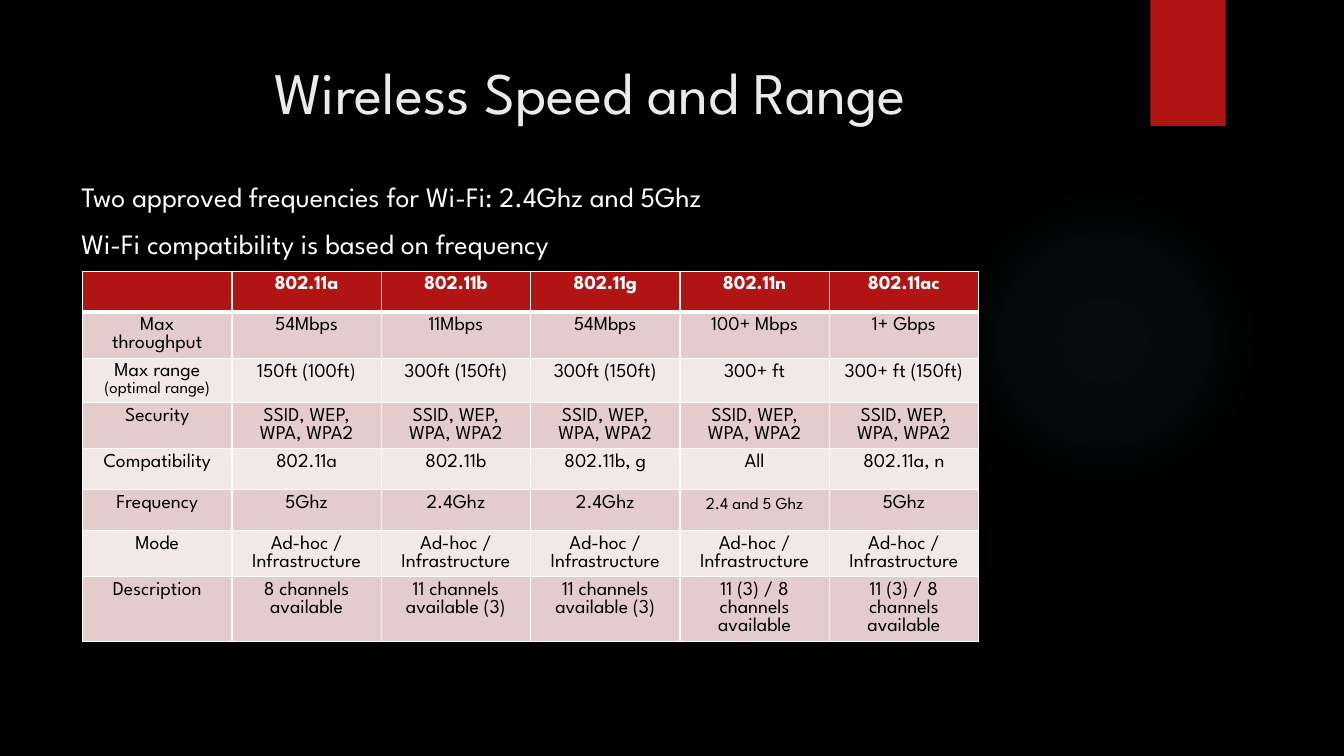
from lxml.etree import SubElement
from pptx import Presentation
from pptx.dml.color import RGBColor
from pptx.enum.shapes import MSO_SHAPE
from pptx.enum.text import MSO_ANCHOR, PP_ALIGN
from pptx.oxml import parse_xml
from pptx.oxml.ns import nsdecls, qn
from pptx.util import Pt

HUES = {"back": "000000", "red": "B01513", "glow": "50B9C1", "title": "EBEBEB",
        "white": "FFFFFF", "ink": "000000", "dark": "E4CCCC", "light": "F2E8E7"}
FACE = "League Spartan"


def rgb(name):
    return RGBColor.from_string(HUES[name])


def write(para, text, size, hue, bold=False):
    run = para.add_run()
    run.text = text
    look = {"name": FACE, "size": Pt(size), "bold": bold}
    for key, value in look.items():
        setattr(run.font, key, value)
    run.font.color.rgb = rgb(hue)


deck = Presentation()
deck.slide_width, deck.slide_height = Pt(960), Pt(540)
slide = deck.slides.add_slide(deck.slide_layouts[6])
slide.background.fill.solid()
slide.background.fill.fore_color.rgb = rgb("back")

# Soft round glow
glow = slide.shapes.add_shape(MSO_SHAPE.OVAL, Pt(677.5), Pt(131.8), Pt(221.8), Pt(221.8))
glow.shadow.inherit = False
glow.line.fill.background()
stops = "".join(
    f'<a:gs pos="{pos * 1000}"><a:srgbClr val="{HUES["glow"]}">'
    f'<a:alpha val="{alpha * 1000}"/></a:srgbClr></a:gs>'
    for pos, alpha in ((0, 7), (36, 6), (69, 0)))
grad = parse_xml(
    f'<a:gradFill {nsdecls("a")}><a:gsLst>{stops}</a:gsLst><a:path path="circle">'
    '<a:fillToRect l="50000" t="50000" r="50000" b="50000"/></a:path></a:gradFill>')
glow.element.spPr.find(qn("a:prstGeom")).addnext(grad)

# Red tab
tab = slide.shapes.add_shape(MSO_SHAPE.RECTANGLE, Pt(821.8), 0, Pt(53.8), Pt(90))
tab.shadow.inherit = False
tab.line.fill.background()
tab.fill.solid()
tab.fill.fore_color.rgb = rgb("red")

# Title
title = slide.shapes.add_textbox(Pt(51), Pt(36), Pt(741), Pt(64)).text_frame
for key, value in {"word_wrap": True, "vertical_anchor": MSO_ANCHOR.TOP}.items():
    setattr(title, key, value)
title.paragraphs[0].alignment = PP_ALIGN.CENTER
write(title.paragraphs[0], "Wireless Speed and Range", 42, "title")

# Body lines
body = slide.shapes.add_textbox(Pt(51), Pt(124.5), Pt(741), Pt(367)).text_frame
body.word_wrap = True
lines = ["Two approved frequencies for Wi-Fi: 2.4Ghz and 5Ghz",
         "Wi-Fi compatibility is based on frequency"]
for i, line in enumerate(lines):
    para = body.add_paragraph() if i else body.paragraphs[0]
    if i:
        para.space_before = Pt(10)
    write(para, line, 20, "white")

# Table
SAFE = "SSID, WEP, WPA, WPA2"
MODE = "Ad-hoc / Infrastructure"
BOTH = "11 (3) / 8 channels available"
FEW = "11 channels available (3)"
rows = [
    ["", "802.11a", "802.11b", "802.11g", "802.11n", "802.11ac"],
    ["Max throughput", "54Mbps", "11Mbps", "54Mbps", "100+ Mbps", "1+ Gbps"],
    ["Max range ", "150ft (100ft)", "300ft (150ft)", "300ft (150ft)", "300+ ft",
     "300+ ft (150ft)"],
    ["Security"] + [SAFE] * 5,
    ["Compatibility", "802.11a", "802.11b", "802.11b, g", "All", "802.11a, n"],
    ["Frequency", "5Ghz", "2.4Ghz", "2.4Ghz", "2.4 and 5 Ghz", "5Ghz"],
    ["Mode"] + [MODE] * 5,
    ["Description", "8 channels available", FEW, FEW, BOTH, BOTH],
]
small = {"2.4 and 5 Ghz": 12}
grid = slide.shapes.add_table(len(rows), 6, Pt(59), Pt(193.7), Pt(640), Pt(234.4)).table
grid.horz_banding = False
for col in grid.columns:
    col.width = Pt(106.67)
for r, row in enumerate(rows):
    grid.rows[r].height = Pt(29.3)
    tint = "dark" if r % 2 else "light"
    for c, text in enumerate(row):
        cell = grid.cell(r, c)
        # Borders, with a thick rule below the header
        wide = {"L": 1, "R": 1, "T": 3 if r == 1 else 1, "B": 1 if r else 3}
        for side, width in wide.items():
            edge = SubElement(cell._tc.get_or_add_tcPr(), qn(f"a:ln{side}"), w=str(Pt(width)))
            paint = SubElement(edge, qn("a:solidFill"))
            SubElement(paint, qn("a:srgbClr"), val=HUES["white"])
        cell.fill.solid()
        cell.fill.fore_color.rgb = rgb(tint if r else "red")
        para = cell.text_frame.paragraphs[0]
        para.alignment = PP_ALIGN.CENTER
        para.line_spacing = Pt(12.9)
        if text:
            write(para, text, small.get(text, 14), "ink" if r else "white", r == 0)

# Smaller second line in the range label
label = grid.cell(2, 0).text_frame.paragraphs[0]
label.line_spacing = Pt(12.1)
write(label, "(optimal range)", 12, "ink")

deck.save("out.pptx")
